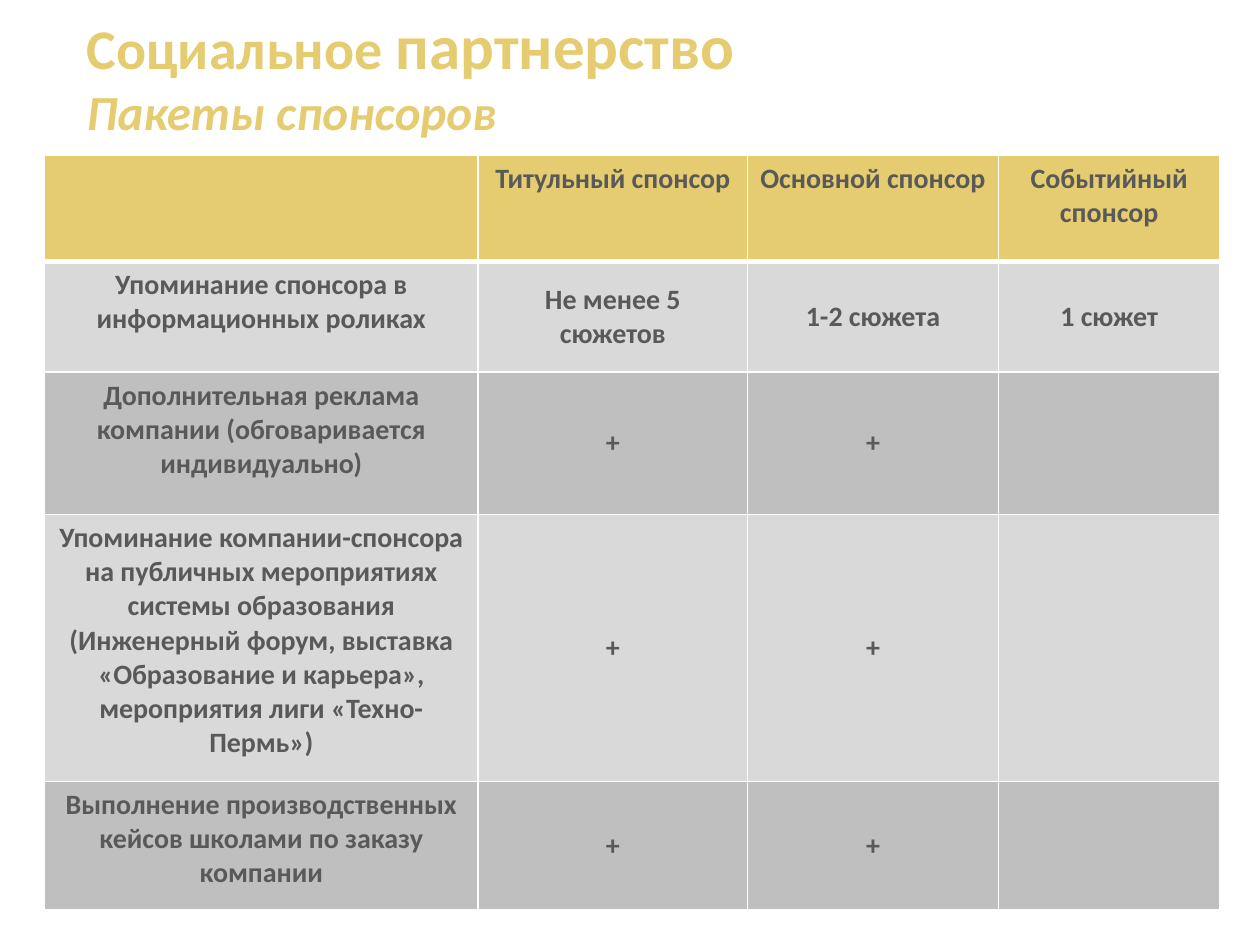
from dataclasses import dataclass

from lxml.etree import SubElement
from pptx import Presentation
from pptx.dml.color import RGBColor
from pptx.enum.text import MSO_ANCHOR, MSO_AUTO_SIZE, PP_ALIGN
from pptx.oxml.ns import qn
from pptx.util import Pt


@dataclass(frozen=True)
class Theme:
    font: str = "Calibri"
    gold: str = "E6CC70"
    text: str = "595959"
    light_band: str = "D9D9D9"
    dark_band: str = "BFBFBF"
    border: str = "FFFFFF"
    thin: float = 1
    thick: float = 3
    title_size: float = 32
    emphasis_size: float = 36
    subtitle_size: float = 28
    cell_size: float = 16


THEME = Theme()

COLUMN_WIDTHS = [247.68, 154.08, 143.28, 126.72]
ROW_HEIGHTS = [60.48, 63.36, 81.36, 152.64, 73.44]
PACKAGES = [
    ["", "Титульный спонсор", "Основной спонсор", "Событийный спонсор"],
    ["Упоминание спонсора в информационных роликах",
     "Не менее 5 сюжетов", "1-2 сюжета", "1 сюжет"],
    ["Дополнительная реклама компании (обговаривается индивидуально)", "+", "+", ""],
    ["Упоминание компании-спонсора на публичных мероприятиях системы образования "
     "(Инженерный форум, выставка «Образование и карьера», "
     "мероприятия лиги «Техно-Пермь»)", "+", "+", ""],
    ["Выполнение производственных кейсов школами по заказу компании", "+", "+", ""],
]


def style_font(font, size, color, italic=None):
    font.name = THEME.font
    font.size = Pt(size)
    font.bold = True
    font.italic = italic
    font.color.rgb = RGBColor.from_string(color)


def set_borders(cell, top, bottom):
    """Draw all four sides; must run before the fill, which follows them in the XML."""
    properties = cell._tc.get_or_add_tcPr()
    sides = {"lnL": THEME.thin, "lnR": THEME.thin, "lnT": top, "lnB": bottom}
    for side, width in sides.items():
        line = SubElement(properties, qn(f"a:{side}"), w=str(Pt(width)))
        fill = SubElement(line, qn("a:solidFill"))
        SubElement(fill, qn("a:srgbClr"), val=THEME.border)


def fill_cell(cell, text, color, anchor):
    cell.fill.solid()
    cell.fill.fore_color.rgb = RGBColor.from_string(color)
    cell.vertical_anchor = anchor
    cell.text = text
    para = cell.text_frame.paragraphs[0]
    para.alignment = PP_ALIGN.CENTER
    style_font(para.font, THEME.cell_size, THEME.text)


def add_heading(page):
    box = page.shapes.add_textbox(Pt(42.5), Pt(0), Pt(388.8), Pt(85))
    frame = box.text_frame
    frame.word_wrap = False
    frame.auto_size = MSO_AUTO_SIZE.SHAPE_TO_FIT_TEXT
    title = frame.paragraphs[0]
    for text, size in [("Социальное ", THEME.title_size),
                       ("партнерство", THEME.emphasis_size)]:
        span = title.add_run()
        span.text = text
        style_font(span.font, size, THEME.gold)
    subtitle = frame.add_paragraph()
    subtitle.text = "Пакеты спонсоров"
    style_font(subtitle.font, THEME.subtitle_size, THEME.gold, italic=True)


def add_package_table(page):
    table = page.shapes.add_table(
        len(ROW_HEIGHTS), len(COLUMN_WIDTHS), Pt(25.5), Pt(88.8),
        Pt(sum(COLUMN_WIDTHS)), Pt(sum(ROW_HEIGHTS))).table
    for column, width in zip(table.columns, COLUMN_WIDTHS):
        column.width = Pt(width)
    for row, height in zip(table.rows, ROW_HEIGHTS):
        row.height = Pt(height)

    bands = [THEME.dark_band, THEME.light_band]
    for row_index, texts in enumerate(PACKAGES):
        is_header = row_index == 0
        color = THEME.gold if is_header else bands[row_index % 2]
        top = THEME.thick if row_index == 1 else THEME.thin
        bottom = THEME.thick if is_header else THEME.thin
        for column_index, text in enumerate(texts):
            cell = table.cell(row_index, column_index)
            at_top = is_header or column_index == 0
            set_borders(cell, top, bottom)
            fill_cell(cell, text, color, MSO_ANCHOR.TOP if at_top else MSO_ANCHOR.MIDDLE)


def main():
    deck = Presentation()
    deck.slide_width, deck.slide_height = Pt(720), Pt(540)
    page = deck.slides.add_slide(deck.slide_layouts[6])
    add_package_table(page)
    add_heading(page)
    deck.save("out.pptx")


if __name__ == "__main__":
    main()
